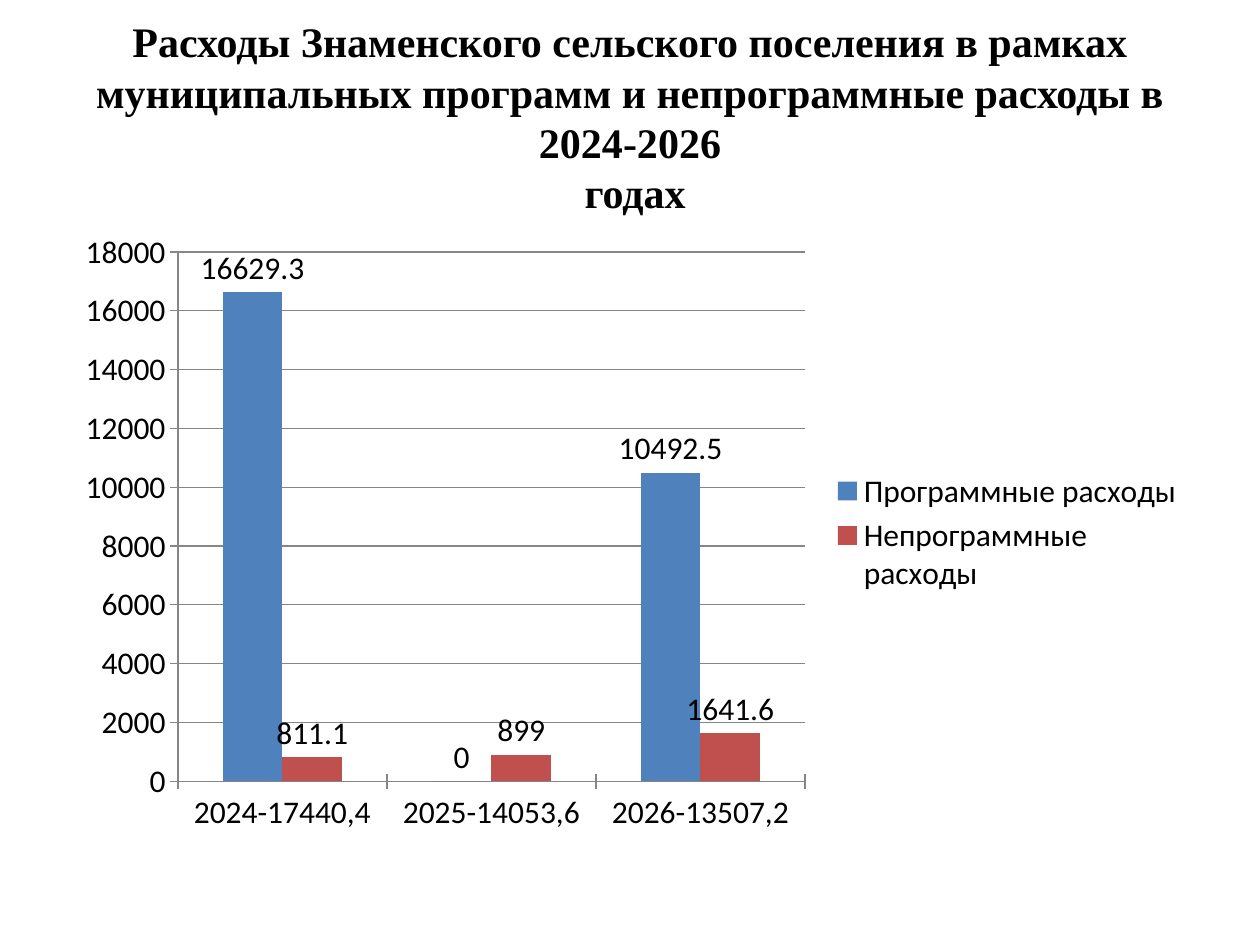
import pptx
import pptx.chart.data
import pptx.dml.color
import pptx.enum.chart
import pptx.enum.text
import pptx.util

Pt = pptx.util.Pt
COLORS = {"text": "000000", "grid": "868686", "plan": "4F81BD", "other": "C0504D"}


class Deck:
    def __init__(self):
        self.show = pptx.Presentation()
        self.show.slide_width, self.show.slide_height = Pt(720), Pt(540)
        self.slide = self.show.slides.add_slide(self.show.slide_layouts[6])

    def color(self, name):
        return pptx.dml.color.RGBColor.from_string(COLORS[name])

    def style(self, font, face, size, bold=False):
        font.name, font.size, font.bold = face, Pt(size), bold
        font.color.rgb = self.color("text")

    def title(self, text, x, y, w, h):
        frame = self.slide.shapes.add_textbox(Pt(x), Pt(y), Pt(w), Pt(h)).text_frame
        frame.word_wrap = True
        frame.vertical_anchor = pptx.enum.text.MSO_ANCHOR.MIDDLE
        frame.text = text
        par = frame.paragraphs[0]
        par.alignment = pptx.enum.text.PP_ALIGN.CENTER
        for run in par.runs:
            self.style(run.font, "Times New Roman", 24, True)

    def line(self, line):
        line.color.rgb = self.color("grid")
        line.width = Pt(0.75)

    def chart(self, cats, rows, x, y, w, h):
        """Draw clustered columns; rows hold name, values and colour."""
        enum = pptx.enum.chart
        data = pptx.chart.data.CategoryChartData()
        data.categories = cats
        for name, vals, _ in rows:
            data.add_series(name, vals)
        chart = self.slide.shapes.add_chart(
            enum.XL_CHART_TYPE.COLUMN_CLUSTERED, Pt(x), Pt(y), Pt(w), Pt(h), data
        ).chart
        self.style(chart.font, "Calibri", 18)
        chart.has_title = False
        chart.has_legend = True
        chart.legend.position = enum.XL_LEGEND_POSITION.RIGHT
        chart.legend.include_in_layout = False

        for axis in (chart.category_axis, chart.value_axis):
            axis.major_tick_mark = enum.XL_TICK_MARK.CROSS
            self.line(axis.format.line)
        chart.value_axis.has_major_gridlines = True
        self.line(chart.value_axis.major_gridlines.format.line)

        plot = chart.plots[0]
        plot.gap_width, plot.overlap = 150, 0
        plot.vary_by_categories = False
        for series, (_, _, hue) in zip(plot.series, rows):
            series.invert_if_negative = False
            series.format.fill.solid()
            series.format.fill.fore_color.rgb = self.color(hue)
            labels = series.data_labels
            labels.show_value = True
            labels.position = enum.XL_LABEL_POSITION.OUTSIDE_END
            self.style(labels.font, "Calibri", 18)


def main():
    deck = Deck()
    deck.title(
        "Расходы Знаменского сельского поселения в рамках муниципальных "
        "программ и непрограммные расходы в 2024-2026\v годах",
        36, 21.6, 648, 90,
    )
    deck.chart(
        ["2024-17440,4", "2025-14053,6", "2026-13507,2"],
        [
            ("Программные расходы", (16629.3, 0, 10492.5), "plan"),
            ("Непрограммные расходы", (811.1, 899, 1641.6), "other"),
        ],
        36, 126, 648, 356.4,
    )
    deck.show.save("out.pptx")


if __name__ == "__main__":
    main()
